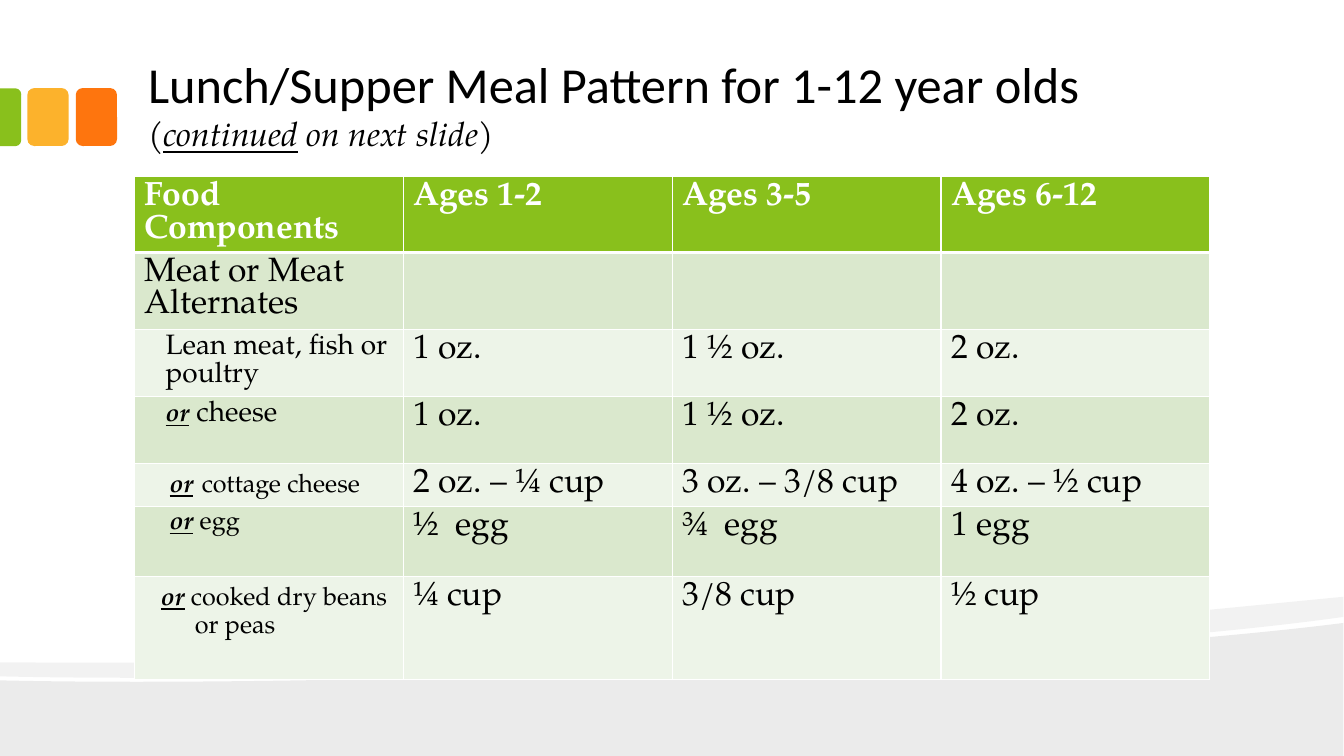
from lxml import etree
from pptx import Presentation
from pptx.dml.color import RGBColor
from pptx.enum.shapes import MSO_SHAPE
from pptx.enum.text import MSO_ANCHOR, MSO_AUTO_SIZE, PP_ALIGN
from pptx.oxml.ns import qn
from pptx.util import Cm, Pt

ROUNDED = MSO_SHAPE.ROUNDED_RECTANGLE
ROUNDED_TOP = MSO_SHAPE.ROUND_2_SAME_RECTANGLE
BOTTOM = MSO_ANCHOR.BOTTOM
NO_AUTOFIT = MSO_AUTO_SIZE.NONE
LEFT = PP_ALIGN.LEFT

BLACK = RGBColor(0x00, 0x00, 0x00)
WHITE = RGBColor(0xFF, 0xFF, 0xFF)
GREEN = RGBColor(0x89, 0xC0, 0x1C)
YELLOW = RGBColor(0xFC, 0xB2, 0x2C)
ORANGE = RGBColor(0xFE, 0x75, 0x0E)
BAND_DARK = RGBColor(0xDA, 0xE8, 0xCD)
BAND_LIGHT = RGBColor(0xED, 0xF4, 0xE8)

HEADING_FONT = "Calibri"
BODY_FONT = "TeX Gyre Pagella"
AMOUNT_SIZE = 24
AMOUNT_LINE = 23.5

HEADER = ["Food Components", "Ages 1-2", "Ages 3-5", "Ages 6-12"]
# Each label line: indent in cm, line height in pt, spans of (text, size, stressed)
OR = ("or", 18, True)
MEALS = [
    ([(0, AMOUNT_LINE, [("Meat or Meat Alternates", 24, False)])], ["", "", ""]),
    ([(0.53, 20, [("Lean meat, fish or", 20, False)]),
      (0.53, 20, [("poultry", 20, False)])], ["1 oz.", "1 ½ oz.", "2 oz."]),
    ([(0.53, 20, [OR, (" cheese", 20, False)])], ["1 oz.", "1 ½ oz.", "2 oz."]),
    ([(0.63, AMOUNT_LINE, [OR, (" ", 24, False), ("cottage cheese", 18, False)])],
     ["2 oz. – ¼ cup", "3 oz. – 3/8 cup", "4 oz. – ½ cup"]),
    ([(0.63, 18, [OR, (" egg", 18, False)])], ["½  egg", "¾  egg", "1 egg"]),
    ([(0.41, 22, [OR, (" cooked dry beans", 18, False)]),
      (1.27, 20, [("or peas", 18, False)])], ["¼ cup", "3/8 cup", "½ cup"]),
]
ROW_HEIGHTS = [1.89, 1.94, 1.69, 1.69, 1.08, 1.76, 2.6]


class SlideBuilder:
    def __init__(self, deck):
        self.page = deck.slides.add_slide(deck.slide_layouts[5])

    def style_span(self, span, size, color=BLACK, font=BODY_FONT,
                   bold=False, italic=False, underline=False):
        span.font.name = font
        span.font.size = Pt(size)
        span.font.color.rgb = color
        span.font.bold = bold
        span.font.italic = italic
        span.font.underline = underline

    def title(self, left, top, width, height, heading, note_spans):
        box = self.page.shapes.title
        box.left, box.top, box.width, box.height = map(Cm, (left, top, width, height))
        frame = box.text_frame
        frame.word_wrap = True
        frame.auto_size = NO_AUTOFIT
        frame.vertical_anchor = BOTTOM
        frame.margin_left = frame.margin_right = Cm(0.34)
        frame.margin_top = frame.margin_bottom = Cm(0.17)
        frame.text = heading
        para = frame.paragraphs[0]
        para.alignment = LEFT
        para.line_spacing = 1.0
        self.style_span(para.runs[0], 36, font=HEADING_FONT)
        for text, italic, underline in note_spans:
            span = para.add_run()
            span.text = text
            self.style_span(span, 24, italic=italic, underline=underline)

    def paint(self, shape, color):
        shape.shadow.inherit = False
        shape.fill.solid()
        shape.fill.fore_color.rgb = color
        shape.line.fill.background()

    def tab(self, kind, left, top, width, height, color, rotation=0, corners=()):
        shape = self.page.shapes.add_shape(kind, Cm(left), Cm(top), Cm(width), Cm(height))
        shape.rotation = rotation
        for index, corner in enumerate(corners):
            shape.adjustments[index] = corner
        self.paint(shape, color)

    def wave(self, points, curve_starts, opacity):
        """Draw a translucent area; three points from each curve start form a curve."""
        points = [(Cm(x * 2.54), Cm(y * 2.54)) for x, y in points]
        builder = self.page.shapes.build_freeform(*points[0])
        builder.add_line_segments(points[1:], close=True)
        shape = builder.convert_to_shape()
        segments = list(shape._element.iter(qn("a:lnTo")))
        for start in curve_starts:
            curve = etree.Element(qn("a:cubicBezTo"))
            segments[start].addprevious(curve)
            for segment in segments[start:start + 3]:
                curve.append(segment[0])
                segment.getparent().remove(segment)
        self.paint(shape, BLACK)
        color = next(shape._element.spPr.iterchildren(qn("a:solidFill")))[0]
        etree.SubElement(color, qn("a:alpha"), val=str(opacity * 1000))

    def borders(self, cell, bottom):
        properties = cell._tc.get_or_add_tcPr()
        for side, points in (("L", 1), ("R", 1), ("T", 1), ("B", bottom)):
            line = etree.SubElement(properties, qn("a:ln" + side), w=str(Pt(points)))
            fill = etree.SubElement(line, qn("a:solidFill"))
            etree.SubElement(fill, qn("a:srgbClr"), val=str(WHITE))

    def plain_cell(self, cell, text, color=BLACK, bold=False):
        cell.text_frame.text = text
        para = cell.text_frame.paragraphs[0]
        para.line_spacing = Pt(AMOUNT_LINE)
        for span in para.runs:
            self.style_span(span, AMOUNT_SIZE, color, bold=bold)

    def label_cell(self, cell, lines):
        frame = cell.text_frame
        for index, (indent, line_height, spans) in enumerate(lines):
            para = frame.add_paragraph() if index else frame.paragraphs[0]
            para.line_spacing = Pt(line_height)
            para._p.get_or_add_pPr().set("marL", str(Cm(indent)))
            for text, size, stressed in spans:
                span = para.add_run()
                span.text = text
                self.style_span(span, size, bold=stressed, italic=stressed,
                                underline=stressed)

    def table(self, left, top, width, header, meals, heights):
        frame = self.page.shapes.add_table(len(heights), len(header), Cm(left), Cm(top),
                                           Cm(width), Cm(sum(heights)))
        table = frame.table
        for row, height in zip(table.rows, heights):
            row.height = Cm(height)
        for column, text in enumerate(header):
            self.plain_cell(table.cell(0, column), text, WHITE, bold=True)
        for row, (label, amounts) in enumerate(meals, 1):
            self.label_cell(table.cell(row, 0), label)
            for column, amount in enumerate(amounts, 1):
                self.plain_cell(table.cell(row, column), amount)
        for index, row in enumerate(table.rows):
            band = BAND_DARK if index % 2 else BAND_LIGHT
            for cell in row.cells:
                self.borders(cell, 1 if index else 3)
                cell.fill.solid()
                cell.fill.fore_color.rgb = band if index else GREEN


def main():
    deck = Presentation()
    deck.slide_width, deck.slide_height = Cm(33.87), Cm(19.05)
    slide = SlideBuilder(deck)

    slide.wave([(13.33, 6.18), (13.33, 7.5), (0, 7.5), (0, 6.75),
                (3.52, 6.83), (10.42, 6.55), (13.33, 6.18)], [3], 8)
    slide.wave([(13.33, 5.92), (13.33, 6.12),
                (12.55, 6.23), (11.49, 6.33), (10.29, 6.41),
                (6.98, 6.63), (2.58, 6.77), (0, 6.71), (0, 6.57),
                (6.52, 6.62), (9.71, 6.27), (13.33, 5.92)], [1, 4, 8], 5)

    slide.tab(ROUNDED, 1.91, 2.22, 1.04, 1.46, ORANGE)
    slide.tab(ROUNDED, 0.69, 2.22, 1.04, 1.46, YELLOW)
    slide.tab(ROUNDED_TOP, -0.46, 2.69, 1.46, 0.53, GREEN, 90, (0.29, 0))

    slide.title(3.39, 0.43, 27.08, 3.61, "Lunch/Supper Meal Pattern for 1-12 year olds ",
                [("(", True, False), ("continued", True, True),
                 (" on next slide)", True, False)])
    slide.table(3.39, 4.45, 27.1, HEADER, MEALS, ROW_HEIGHTS)
    deck.save("out.pptx")


if __name__ == "__main__":
    main()
